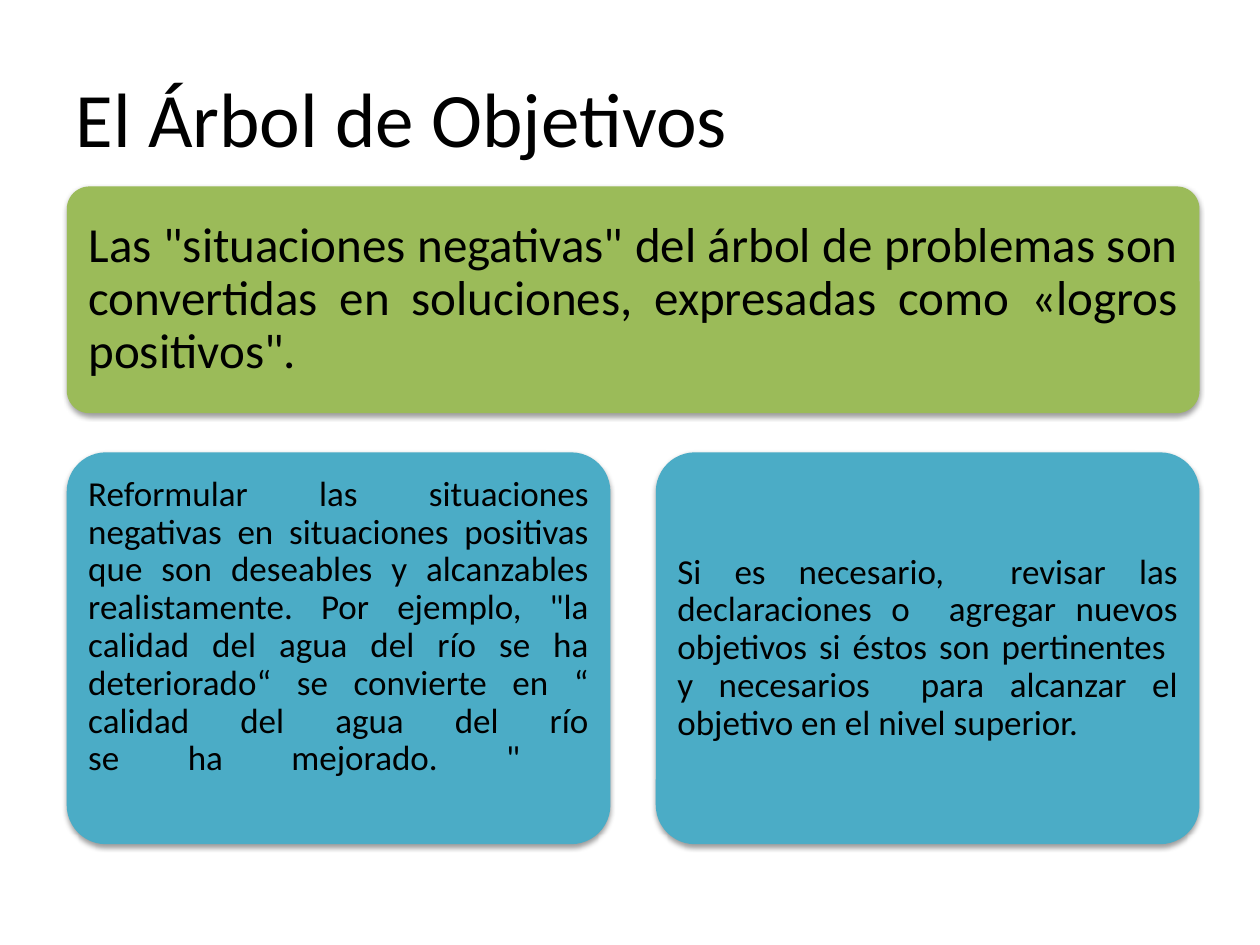
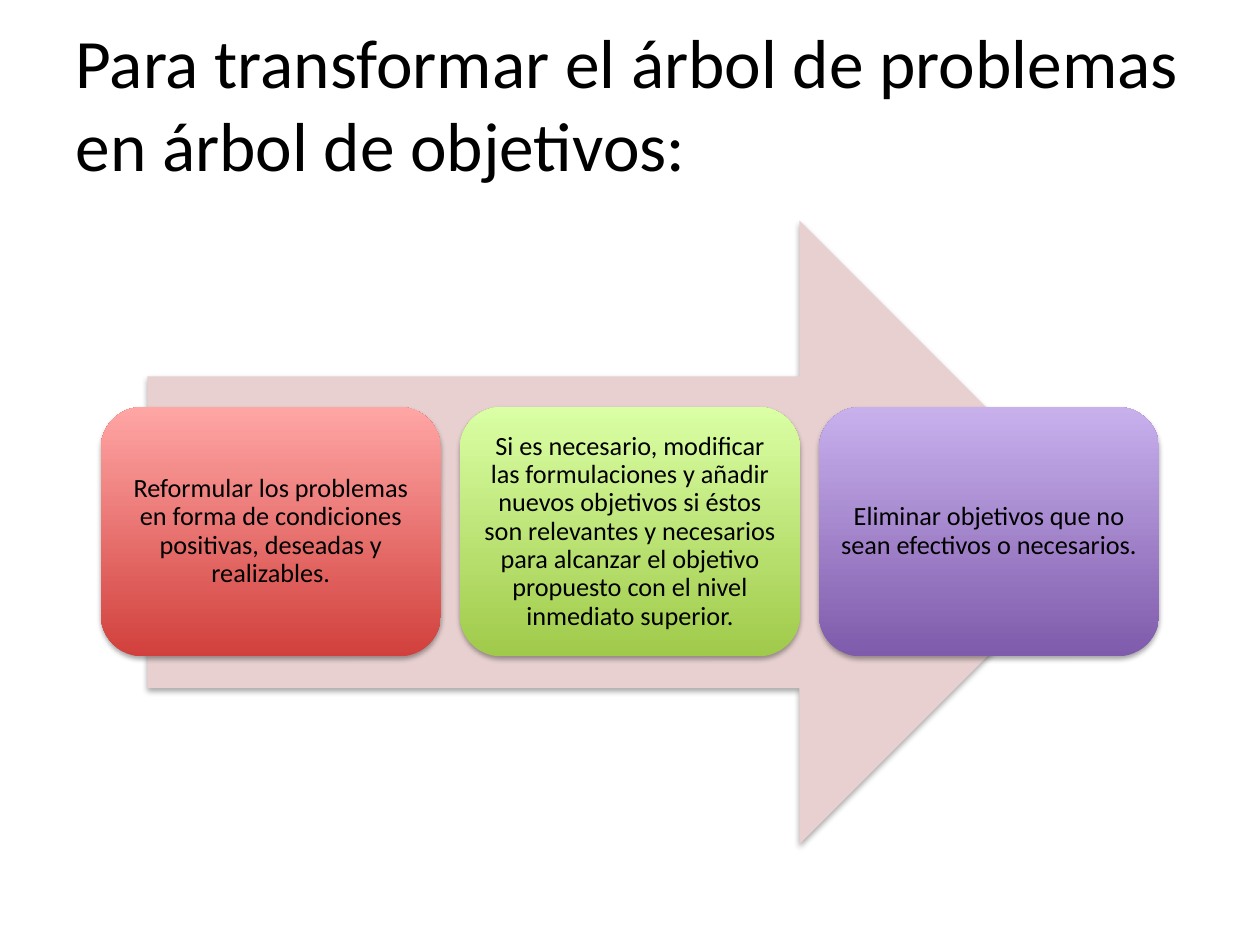
"""Builds two slides on turning a problem tree into an objective tree."""
from dataclasses import dataclass

from lxml.etree import SubElement
from pptx import Presentation
from pptx.dml.color import RGBColor
from pptx.enum.shapes import MSO_SHAPE as Shape
from pptx.enum.text import MSO_ANCHOR as Anchor, MSO_AUTO_SIZE as AutoSize, PP_ALIGN as Align
from pptx.oxml.ns import qn
from pptx.util import Inches, Pt

TREE_TITLE = "El Árbol de Objetivos"
PRINCIPLE = (
    'Las "situaciones negativas" del árbol de problemas son\n'
    'convertidas en soluciones, expresadas como «logros positivos". '
)
ACTIONS = [
    'Reformular las situaciones negativas en situaciones positivas que son deseables y '
    'alcanzables realistamente. Por ejemplo, "la calidad del agua del río se ha deteriorado“ '
    'se convierte en “ calidad del agua del río\nse ha mejorado. " \n',
    "Si es necesario,  revisar las declaraciones o  agregar nuevos objetivos si éstos son "
    "pertinentes  y necesarios  para alcanzar el objetivo en el nivel superior.",
]
STEPS_TITLE = "Para transformar el árbol de problemas en árbol de objetivos:"
STEPS = [
    ("Reformular los problemas en forma de condiciones positivas, deseadas y realizables.",
     ("D1403C", "FFA6A5")),
    ("Si es necesario, modificar las formulaciones y añadir nuevos objetivos si éstos son "
     "relevantes y necesarios para alcanzar el objetivo propuesto con el nivel inmediato superior.",
     ("A0CA4A", "DAFFA5")),
    ("Eliminar objetivos que no sean efectivos o necesarios.", ("7F5BAB", "C8B0ED")),
]


@dataclass(frozen=True)
class Theme:
    """Colours, font and type sizes of the deck."""
    font: str = "Calibri"
    ink: str = "000000"
    principle: str = "9BBB59"
    action: str = "4BACC6"
    arrow: str = "E8D0D0"
    title_size: float = 44
    long_title_size: float = 39.6
    principle_size: float = 28
    action_size: float = 20
    step_size: float = 15


THEME = Theme()
FLAT_SHADOW = (1.6, 38)
STEP_SHADOW = (1.8, 35)


def columns(left, width, count, gap):
    """Return the left edge and width of equal columns."""
    column = (width - gap * (count - 1)) / count
    return [(left + i * (column + gap), column) for i in range(count)]


def write(frame, text, size, align):
    """Put one formatted paragraph into a text frame."""
    paragraph = frame.paragraphs[0]
    paragraph.text = text
    paragraph.alignment = align
    font = paragraph.font
    font.name, font.size = THEME.font, Pt(size)
    font.color.rgb = RGBColor.from_string(THEME.ink)
    return paragraph


def add_titled_slide(deck, title, size, top, height, bottom_inset=0.05):
    """Add a slide with a left-aligned title."""
    slide = deck.slides.add_slide(deck.slide_layouts[5])
    heading = slide.shapes.title
    heading.left, heading.top = Inches(0.5), Inches(top)
    heading.width, heading.height = deck.slide_width - Inches(1), Inches(height)
    frame = heading.text_frame
    frame.auto_size = AutoSize.NONE
    frame.vertical_anchor = Anchor.MIDDLE
    frame.margin_bottom = Inches(bottom_inset)
    write(frame, title, size, Align.LEFT)
    return slide


def add_panel(slide, kind, box, colours, shadow):
    """Add a borderless shape with a solid or two-colour fill and a soft shadow."""
    panel = slide.shapes.add_shape(kind, *map(Inches, box))
    if isinstance(colours, str):
        panel.fill.solid()
        panel.fill.fore_color.rgb = RGBColor.from_string(colours)
    else:
        panel.fill.gradient()
        panel.fill.gradient_angle = 90
        for stop, colour in zip(panel.fill.gradient_stops, colours):
            stop.color.rgb = RGBColor.from_string(colour)
    panel.line.fill.background()
    panel.shadow.inherit = False
    distance, opacity = shadow
    effects = panel.element.spPr.find(qn("a:effectLst"))
    outer = SubElement(effects, qn("a:outerShdw"), blurRad=str(Pt(3.1)), dist=str(Pt(distance)),
                       dir="5400000", rotWithShape="0")
    tint = SubElement(outer, qn("a:srgbClr"), val="000000")
    SubElement(tint, qn("a:alpha"), val=str(opacity * 1000))
    return panel


def add_card(slide, box, colours, shadow, text, size, align, inset, corner=None):
    """Add a rounded panel holding one paragraph."""
    card = add_panel(slide, Shape.ROUNDED_RECTANGLE, box, colours, shadow)
    if corner is not None:
        card.adjustments[0] = corner
    frame = card.text_frame
    frame.word_wrap = True
    frame.vertical_anchor = Anchor.MIDDLE
    frame.margin_left = frame.margin_right = Inches(inset)
    frame.margin_top = frame.margin_bottom = Inches(inset)
    write(frame, text, size, align).line_spacing = 0.9


def build_tree_slide(deck):
    """Show the principle above its two actions."""
    slide = add_titled_slide(deck, TREE_TITLE, THEME.title_size, 0.3, 1.25)
    left, width = 0.53, 8.99
    add_card(slide, (left, 1.48, width, 1.8), THEME.principle, FLAT_SHADOW,
             PRINCIPLE, THEME.principle_size, Align.JUSTIFY, 0.12, 0.1)
    for action, (x, column) in zip(ACTIONS, columns(left, width, len(ACTIONS), 0.36)):
        add_card(slide, (x, 3.59, column, 3.11), THEME.action, FLAT_SHADOW,
                 action, THEME.action_size, Align.JUSTIFY, 0.08, 0.1)


def build_steps_slide(deck):
    """Show the steps in a row across a wide arrow."""
    slide = add_titled_slide(deck, STEPS_TITLE, THEME.long_title_size, 0.36, 1.56, 0.71)
    add_panel(slide, Shape.RIGHT_ARROW, (1.17, 1.75, 7.65, 4.95), THEME.arrow, STEP_SHADOW)
    for (step, colours), (x, column) in zip(STEPS, columns(0.8, 8.4, len(STEPS), 0.15)):
        add_card(slide, (x, 3.23, column, 1.98), colours, STEP_SHADOW,
                 step, THEME.step_size, Align.CENTER, 0.06)


def main():
    """Build and save the deck."""
    deck = Presentation()
    deck.slide_width, deck.slide_height = Inches(10), Inches(7.5)
    build_tree_slide(deck)
    build_steps_slide(deck)
    deck.save("out.pptx")


if __name__ == "__main__":
    main()
